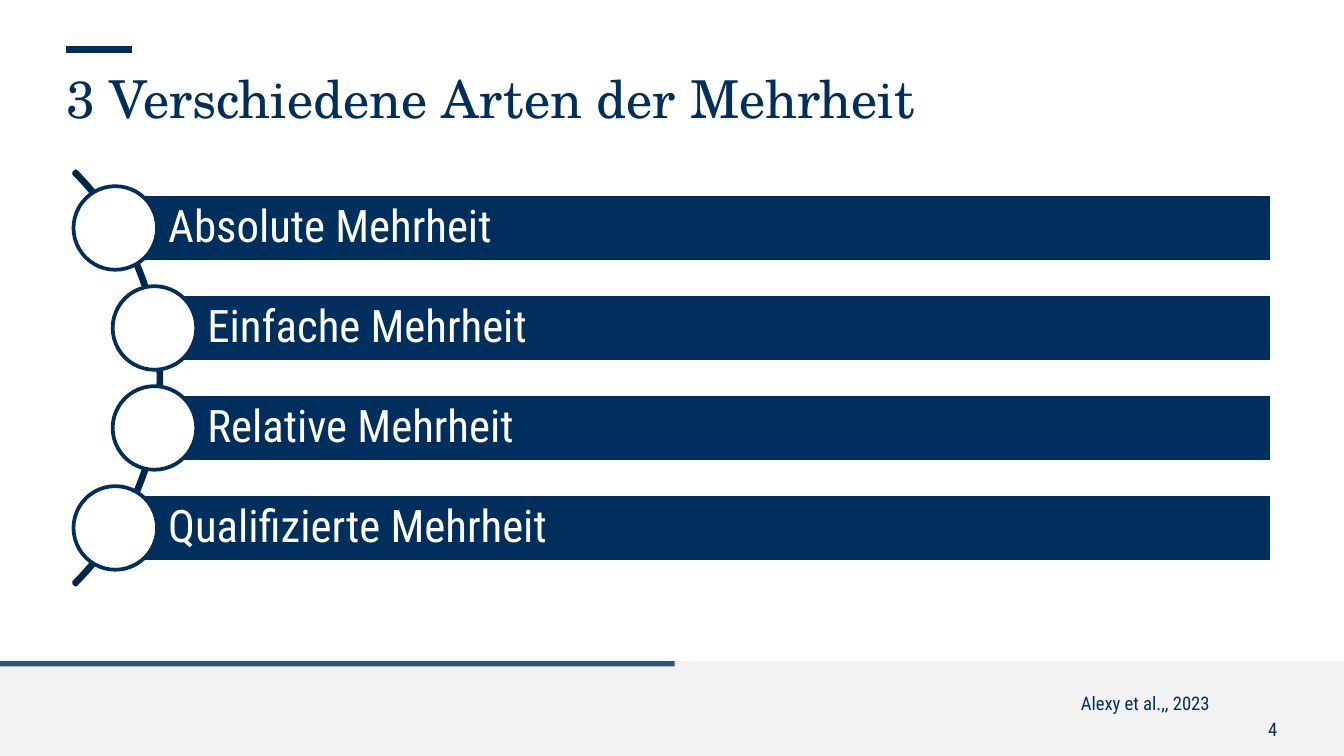
"""Build a slide that lists four kinds of majority along an arc."""
from lxml.etree import SubElement
from pptx import Presentation
from pptx.dml.color import RGBColor
from pptx.enum.shapes import MSO_CONNECTOR as Connector, MSO_SHAPE as Shape
from pptx.enum.text import MSO_ANCHOR as Anchor, PP_ALIGN as Align
from pptx.oxml.ns import qn
from pptx.util import Cm, Pt

TITLE = "3 Verschiedene Arten der Mehrheit"
SOURCE = "Alexy et al.,, 2023"
PAGE_NUMBER = "4"
MAJORITIES = [
    ("Absolute Mehrheit", 2.18),
    ("Einfache Mehrheit", 2.92),
    ("Relative Mehrheit", 2.92),
    ("Qualifizierte Mehrheit", 2.18),
]

NAVY = RGBColor(0x00, 0x2F, 0x5D)
DARK_NAVY = RGBColor(0x00, 0x26, 0x4A)
PALE_GRAY = RGBColor(0xF2, 0xF2, 0xF2)
WHITE = RGBColor(0xFF, 0xFF, 0xFF)
SERIF, SANS = "TeX Gyre Schola", "Roboto Condensed"

WIDTH, HEIGHT = 25.4, 14.29
FOOTER_TOP = 12.5
FIRST_CENTER, PITCH = 4.31, 1.89
BAR_HEIGHT, BAR_RIGHT, CIRCLE = 1.27, 24.03, 1.58


def add_figure(page, kind, left, top, width, height, fill=None, line=None):
    figure = page.shapes.add_shape(kind, Cm(left), Cm(top), Cm(width), Cm(height))
    figure.shadow.inherit = False
    if fill is None:
        figure.fill.background()
    else:
        figure.fill.solid()
        figure.fill.fore_color.rgb = fill
    if line is None:
        figure.line.fill.background()
    else:
        figure.line.color.rgb = line
        figure.line.width = Pt(2)
    return figure


def write(shape, text, size, font, color, align=Align.LEFT, insets=(0, 0, 0, 0)):
    frame = shape.text_frame
    frame.word_wrap = True
    frame.margin_left, frame.margin_top, frame.margin_right, frame.margin_bottom = map(Cm, insets)
    frame.text = text
    para = frame.paragraphs[0]
    para.alignment = align
    span = para.runs[0]
    span.font.size, span.font.name = Pt(size), font
    span.font.color.rgb = color
    return frame


def add_label(page, area, *style):
    return write(page.shapes.add_textbox(*map(Cm, area)), *style)


def add_frame(page):
    add_figure(page, Shape.RECTANGLE, 0, FOOTER_TOP, WIDTH, HEIGHT - FOOTER_TOP, PALE_GRAY)
    stripe = add_figure(page, Shape.RECTANGLE, 0, FOOTER_TOP, 12.75, 0.1, NAVY)
    tint = stripe.fill._xPr.find(qn("a:solidFill"))[0]
    SubElement(tint, qn("a:alpha"), val="80000")
    accent = page.shapes.add_connector(Connector.STRAIGHT, Cm(1.25), Cm(0.94), Cm(2.5), Cm(0.94))
    accent.line.color.rgb = NAVY
    accent.line.width = Pt(3.5)
    SubElement(accent._element.spPr, qn("a:effectLst"))
    add_label(page, (1.25, 1.25, 22.9, 1.6), TITLE, 28, SERIF, NAVY)
    add_label(page, (8.33, 13.08, 14.53, 0.45), SOURCE, 10, SANS, NAVY, Align.RIGHT)
    add_label(page, (22.88, 13.57, 1.26, 0.43), PAGE_NUMBER, 10, SANS, NAVY, Align.RIGHT)


def add_majorities(page):
    arc = add_figure(page, Shape.BLOCK_ARC, -8, 1.62, 11.05, 11.05, line=DARK_NAVY)
    for index, value in enumerate((189, 27, 0.005)):
        arc.adjustments[index] = value
    for row, (name, left) in enumerate(MAJORITIES):
        center = FIRST_CENTER + row * PITCH
        bar = add_figure(page, Shape.RECTANGLE, left, center - BAR_HEIGHT / 2,
                         BAR_RIGHT - left, BAR_HEIGHT, NAVY, WHITE)
        frame = write(bar, name, 24, SANS, WHITE, insets=(1, 0.17, 0.17, 0.17))
        frame.vertical_anchor = Anchor.MIDDLE
        frame.paragraphs[0].line_spacing = 0.9
        add_figure(page, Shape.OVAL, left - CIRCLE / 2, center - CIRCLE / 2,
                   CIRCLE, CIRCLE, WHITE, NAVY)


def main():
    deck = Presentation()
    deck.slide_width, deck.slide_height = Cm(WIDTH), Cm(HEIGHT)
    page = deck.slides.add_slide(deck.slide_layouts[6])
    add_frame(page)
    add_majorities(page)
    deck.save("out.pptx")


if __name__ == "__main__":
    main()
